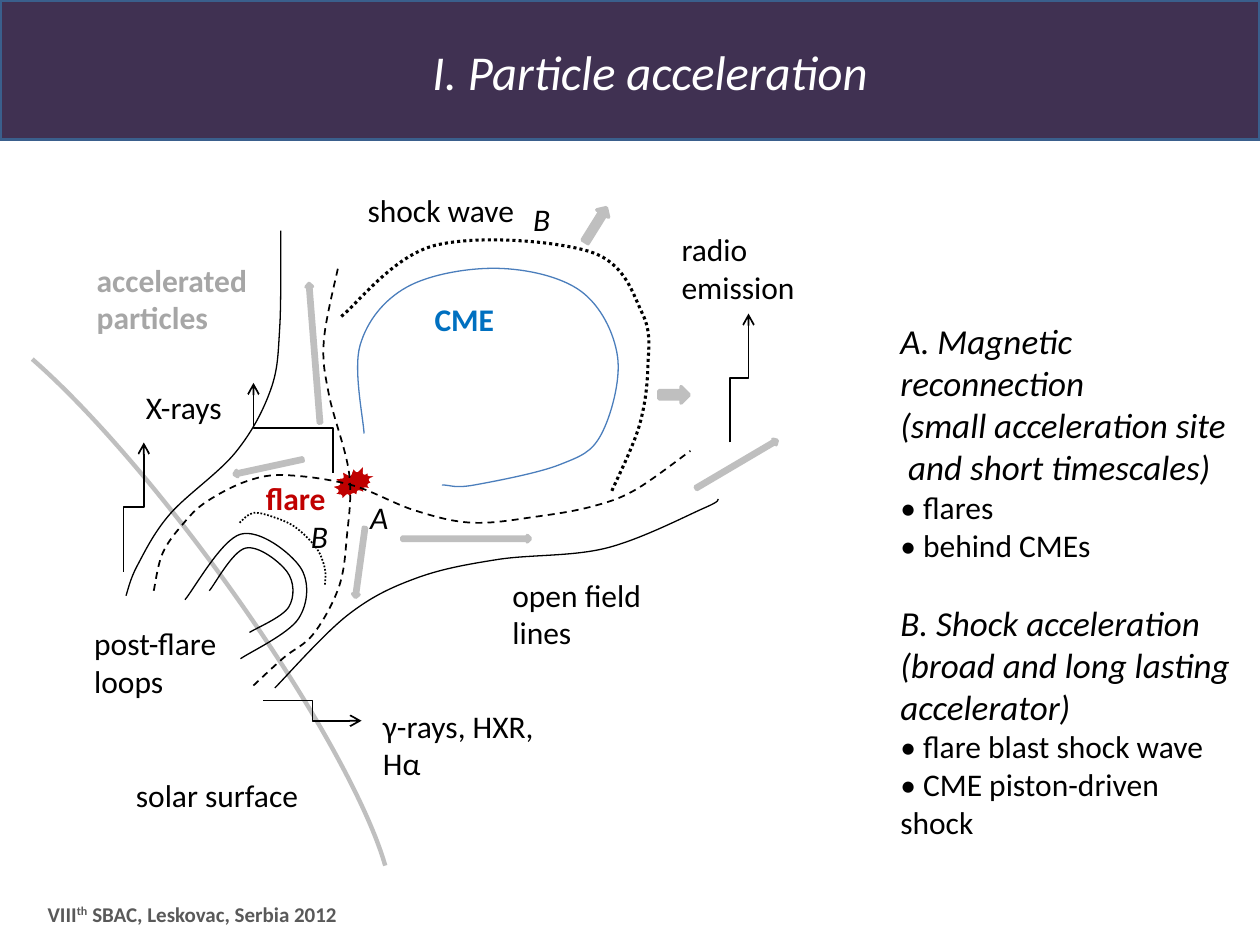
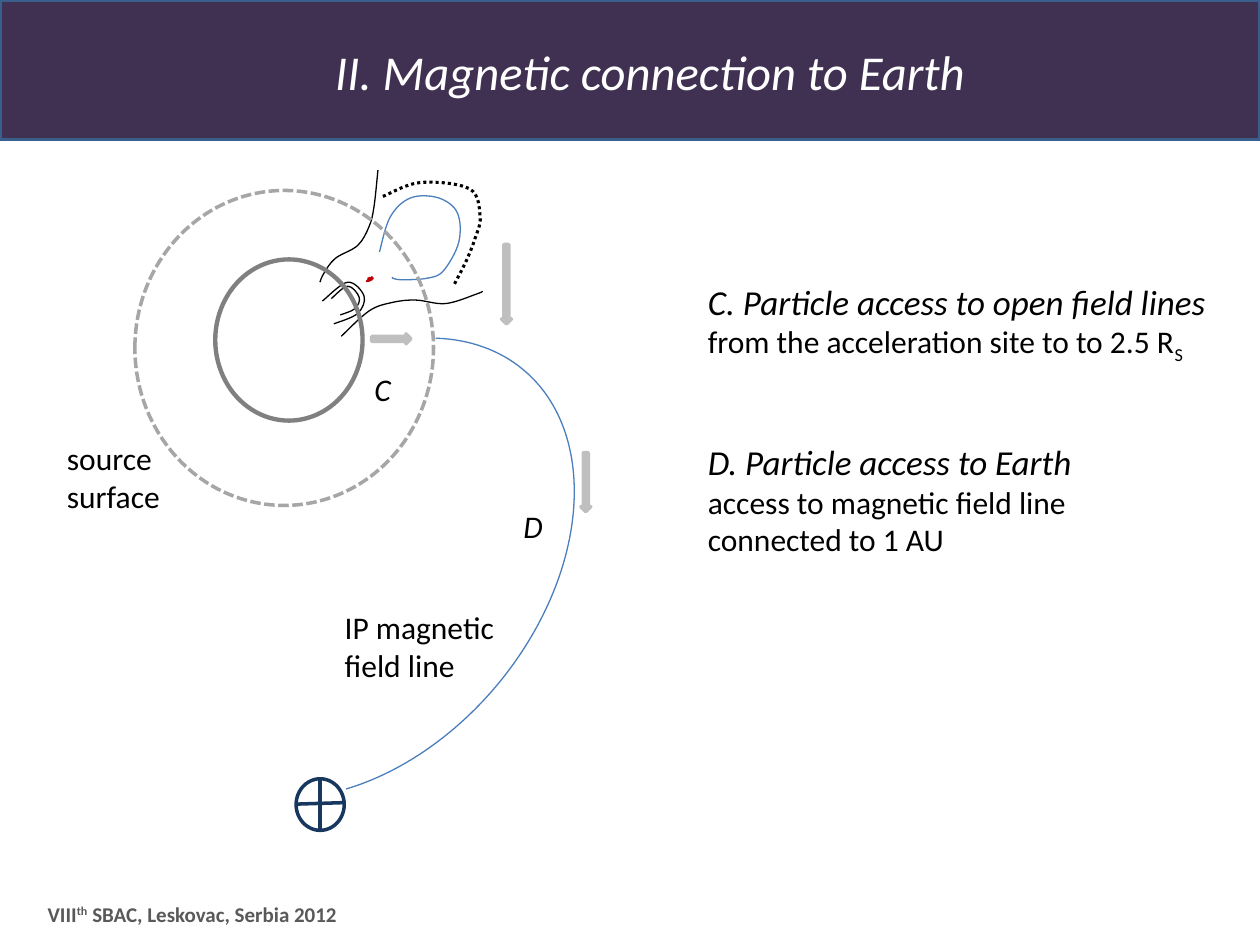
"""Build two slides on solar particle acceleration and its magnetic connection to Earth."""
from lxml.etree import SubElement
from pptx import Presentation
from pptx.dml.color import RGBColor
from pptx.enum.dml import MSO_LINE as Dash
from pptx.enum.shapes import MSO_CONNECTOR as Link, MSO_SHAPE as Preset
from pptx.enum.text import MSO_ANCHOR as Anchor, MSO_AUTO_SIZE as AutoSize, PP_ALIGN as Align
from pptx.oxml.ns import qn
from pptx.util import Cm, Pt

FONT = "Calibri"
WHITE = RGBColor(0xFF, 0xFF, 0xFF)
BLACK = RGBColor(0x00, 0x00, 0x00)
BAND = RGBColor(0x40, 0x31, 0x52)
BAND_EDGE = RGBColor(0x3A, 0x5F, 0x8C)
FOOTER_GRAY = RGBColor(0x59, 0x59, 0x59)
SUN_GRAY = RGBColor(0x80, 0x80, 0x80)
MID_GRAY = RGBColor(0xA6, 0xA6, 0xA6)
LIGHT_GRAY = RGBColor(0xBF, 0xBF, 0xBF)
FLARE_RED = RGBColor(0xC0, 0x00, 0x00)
CME_BLUE = RGBColor(0x00, 0x70, 0xC0)
FIELD_BLUE = RGBColor(0x4B, 0x7E, 0xBC)
EARTH_BLUE = RGBColor(0x17, 0x37, 0x5E)

FLARE_CURVES = [
    ([(6.88, 6.38), (8.76, 4.95), (11.91, 5.08), (12.95, 6.32), (13.06, 7.42),
      (12.88, 8.61), (12.32, 9.93)], BLACK, 1.75, Dash.ROUND_DOT),
    ([(4.22, 11.91), (4.95, 11.05), (5.79, 11.53), (5.82, 12.24), (5.03, 12.75)],
     BLACK, 0.75, None),
    ([(7.34, 8.74), (7.26, 6.96), (8.2, 5.79), (10.03, 5.41), (11.71, 5.87), (12.45, 7.19),
      (12.12, 8.76), (11.28, 9.37), (9.55, 9.78), (8.97, 9.78), (8.94, 9.78)],
     FIELD_BLUE, 0.75, None),
    ([(3.73, 12.09), (4.85, 10.77), (6.05, 11.43), (6.02, 12.47), (4.85, 13.28)],
     BLACK, 0.75, None),
    ([(5.54, 13.87), (7.01, 12.4), (8.38, 11.66), (10.03, 11.28), (12.22, 11.05),
      (14.2, 10.24), (14.48, 10.06)], BLACK, 0.75, None),
    ([(5.66, 4.65), (5.64, 6.6), (5.46, 7.85), (4.75, 9.12), (3.43, 10.36), (2.77, 11.4),
      (2.54, 12.01)], BLACK, 0.75, None),
    ([(3.1, 11.91), (3.28, 11.15), (3.71, 10.54), (4.17, 10.11), (4.98, 9.7), (5.77, 9.58),
      (7.09, 9.78), (8.36, 10.29), (9.53, 10.54), (10.85, 10.41), (11.94, 10.21),
      (12.8, 9.88), (13.92, 9.09)], BLACK, 1, Dash.DASH),
    ([(5.11, 13.82), (5.72, 13.26), (6.32, 12.78), (6.83, 11.84), (6.99, 10.85),
      (7.04, 9.55), (6.63, 7.95), (6.53, 6.86), (6.83, 5.33)], BLACK, 1, Dash.DASH),
    ([(4.83, 10.54), (5.11, 10.34), (5.56, 10.44), (5.97, 10.64), (6.38, 11.05),
      (6.55, 11.46), (6.55, 11.79)], BLACK, 1, Dash.ROUND_DOT),
]
SMALL_FLARE_CURVES = [
    ([(7.72, 3.96), (8.48, 3.68), (9.47, 3.81), (9.68, 4.37), (9.58, 4.8), (9.4, 5.26),
      (9.14, 5.77)], BLACK, 1.75, Dash.ROUND_DOT),
    ([(6.68, 6.02), (7.01, 5.77), (7.24, 5.99), (7.16, 6.22), (6.86, 6.35)],
     BLACK, 0.75, None),
    ([(7.65, 5.08), (7.87, 4.37), (8.28, 3.99), (8.84, 3.99), (9.22, 4.29), (9.25, 4.88),
      (8.94, 5.46), (8.61, 5.61), (8.1, 5.64), (7.92, 5.61), (7.92, 5.59)],
     FIELD_BLUE, 0.75, None),
    ([(6.5, 6.07), (7.01, 5.69), (7.34, 5.97), (7.21, 6.32), (6.73, 6.53)],
     BLACK, 0.75, None),
    ([(6.88, 6.78), (7.44, 6.27), (7.9, 6.1), (8.38, 6.05), (8.99, 6.12), (9.63, 5.92),
      (9.73, 5.87)], BLACK, 0.75, None),
    ([(7.62, 3.43), (7.54, 4.17), (7.44, 4.57), (7.21, 4.95), (6.76, 5.21), (6.53, 5.51),
      (6.45, 5.69)], BLACK, 0.75, None),
]
FLARE_FLOWS = [
    (5.41, 9.41, 1.42, 0.13, 167.8), (6.34, 7.12, 2.82, 0.13, 265.5),
    (7.26, 11.34, 1.42, 0.13, 97.8), (9.4, 10.86, 2.59, 0.13, 0),
    (12.01, 4.53, 0.81, 0.28, 301.9), (13.59, 7.96, 0.61, 0.33, 0),
    (14.85, 9.36, 1.9, 0.13, 329.5),
]
EARTH_FLOWS = [(7.89, 6.83, 0.79, 0.2, 0), (10.21, 5.73, 1.6, 0.2, 90),
               (11.81, 9.72, 1.19, 0.2, 90)]
RADIATION_UP = [((2.49, 11.53), (2.9, 8.92)), ((14.71, 8.92), (15.09, 6.32)),
                ((6.71, 9.53), (5.11, 7.72))]
FLARE_LABELS = [
    ("solar surface", 2.49, 15.52, 5.89, 1), ("shock wave", 7.16, 3.73, 3.53, 1),
    ("post-flare\nloops", 1.65, 12.45, 3.51, 2), ("open field lines", 10.08, 11.48, 3.84, 2),
    ("γ-rays, HXR, Hα", 7.47, 14.12, 4.24, 2), ("X-rays", 2.69, 7.7, 2.59, 1),
    ("radio emission", 13.49, 4.52, 2.79, 2),
]
BOLD_LABELS = [
    ("flare", 5.11, 9.53, 2.13, 1, FLARE_RED), ("CME", 8.51, 5.92, 2.49, 1, CME_BLUE),
    ("accelerated particles", 1.7, 5.13, 3.89, 2, MID_GRAY),
]
ACCELERATION = [
    (["A. Magnetic reconnection", "(small acceleration site", " and short timescales)"],
     ["• flares", "• behind CMEs"]),
    (["B. Shock acceleration", "(broad and long lasting", "accelerator)"],
     ["• flare blast shock wave", "• CME piston-driven shock"]),
]
CONNECTION = [
    (["C. Particle access to open field lines"], ["from the acceleration site to to 2.5 R"]),
    (["D. Particle access to Earth"], ["access to magnetic field line", "connected to 1 AU"]),
]


def set_font(paragraph, size, color=BLACK, bold=False, italic=False):
    """Format a whole paragraph."""
    font = paragraph.font
    font.name, font.size, font.bold, font.italic = FONT, Pt(size), bold, italic
    font.color.rgb = color


def add_shifted_run(paragraph, text, percent):
    """Append a superscript or subscript run."""
    span = paragraph.add_run()
    span.text = text
    span._r.get_or_add_rPr().set("baseline", str(percent * 1000))


def paint(shape, color, width, dash=None, fill=None):
    """Set outline and fill, and drop the shadow."""
    shape.shadow.inherit = False
    shape.line.color.rgb = color
    shape.line.width = Pt(width)
    if dash:
        shape.line.dash_style = dash
    if fill is None:
        shape.fill.background()
    else:
        shape.fill.solid()
        shape.fill.fore_color.rgb = fill


def add_preset(page, preset, left, top, width, height, color, weight, dash=None, fill=None,
               rotation=0):
    """Draw a preset shape."""
    shape = page.shapes.add_shape(preset, Cm(left), Cm(top), Cm(width), Cm(height))
    shape.rotation = rotation
    paint(shape, color, weight, dash, fill)
    return shape


def add_arc(page, left, top, width, height, color, weight, rotation, start, end):
    """Draw an open elliptical arc."""
    arc = add_preset(page, Preset.ARC, left, top, width, height, color, weight,
                     rotation=rotation)
    arc.adjustments[0], arc.adjustments[1] = start, end


def bend(shape):
    """Turn the straight segments of a freeform into Bezier curves through its knots."""
    knots = [(int(point.get("x")), int(point.get("y")))
             for point in shape.element.iter(qn("a:pt"))]
    padded = [knots[0], *knots, knots[-1]]
    segments = list(shape.element.iter(qn("a:lnTo")))
    for segment, *near in zip(segments, padded, padded[1:], padded[2:], padded[3:]):
        controls = [(b + (c - a) / 6, c - (d - b) / 6) for a, b, c, d in zip(*near)]
        for place, (x, y) in enumerate(zip(*controls)):
            point = segment.makeelement(qn("a:pt"), x=str(round(x)), y=str(round(y)))
            segment.insert(place, point)
        segment.tag = qn("a:cubicBezTo")


def add_curve(page, points, color, weight, dash):
    """Draw a smooth open curve."""
    first, *rest = [(Cm(x), Cm(y)) for x, y in points]
    builder = page.shapes.build_freeform(*first)
    builder.add_line_segments(rest, close=False)
    curve = builder.convert_to_shape()
    bend(curve)
    paint(curve, color, weight, dash)


def add_flow(page, center_x, center_y, length, thickness, rotation):
    """Draw a gray block arrow about its centre."""
    add_preset(page, Preset.RIGHT_ARROW, center_x - length / 2, center_y - thickness / 2,
               length, thickness, LIGHT_GRAY, 2, fill=LIGHT_GRAY, rotation=rotation)


def add_link(page, kind, start, end, color, weight, arrow=False):
    """Draw a connector, with an open arrowhead if asked."""
    link = page.shapes.add_connector(kind, *(Cm(value) for value in (*start, *end)))
    link.line.color.rgb = color
    link.line.width = Pt(weight)
    properties = link.element.spPr
    if arrow:
        SubElement(properties.find(qn("a:ln")), qn("a:tailEnd"), type="arrow")
    SubElement(properties, qn("a:effectLst"))
    return link


def add_upward_link(page, start, end):
    """Draw an elbow arrow that leaves and arrives vertically."""
    (x0, y0), (x1, y1) = start, end
    center_x, center_y = (x0 + x1) / 2, (y0 + y1) / 2
    half_rise, half_shift = (y0 - y1) / 2, (x1 - x0) / 2
    link = add_link(page, Link.ELBOW, (center_x - half_rise, center_y - half_shift),
                    (center_x + half_rise, center_y + half_shift), BLACK, 1, arrow=True)
    link.rotation = 270


def add_box(page, left, top, width, height):
    """Add a wrapping text box and return its text frame."""
    frame = page.shapes.add_textbox(Cm(left), Cm(top), Cm(width), Cm(height)).text_frame
    frame.word_wrap = True
    return frame


def add_label(page, text, left, top, width, rows, color=BLACK, bold=False, italic=False):
    """Add a diagram label of one or more rows."""
    frame = add_box(page, left, top, width, 0.25 + 0.77 * rows)
    frame.text = text
    for paragraph in frame.paragraphs:
        set_font(paragraph, 18, color, bold, italic)


def add_letter(page, letter, left, top):
    """Add an italic key letter."""
    add_label(page, letter, left, top, 0.9, 1, italic=True)


def add_panel(page, left, top, width, height, sections, gap):
    """Add italic headings with details, sections set apart by a gap in points."""
    frame = add_box(page, left, top, width, height)
    frame.text = "\n".join(line for section in sections for part in section for line in part)
    paragraphs = iter(frame.paragraphs)
    for number, (headings, details) in enumerate(sections):
        for row in range(len(headings)):
            paragraph = next(paragraphs)
            set_font(paragraph, 20, italic=True)
            if number and row == 0:
                paragraph.space_before = Pt(gap)
        for _ in details:
            set_font(next(paragraphs), 18)
    return frame


def add_page(deck, heading):
    """Add a slide with the title band and the footer."""
    page = deck.slides.add_slide(deck.slide_layouts[5])
    add_preset(page, Preset.RECTANGLE, 0, 0, 25.4, 2.81, BAND_EDGE, 2, fill=BAND)
    title = page.shapes.title
    title.left, title.top, title.width, title.height = Cm(3.51), Cm(0.73), Cm(19.2), Cm(1.4)
    frame = title.text_frame
    frame.text = heading
    frame.auto_size = AutoSize.NONE
    frame.vertical_anchor = Anchor.MIDDLE
    frame.paragraphs[0].alignment = Align.CENTER
    set_font(frame.paragraphs[0], 27.8, WHITE, italic=True)
    title.element.getparent().append(title.element)

    footer = add_box(page, 0.71, 17.91, 6.4, 1.02)
    footer.vertical_anchor = Anchor.MIDDLE
    paragraph = footer.paragraphs[0]
    paragraph.add_run().text = "VIII"
    add_shifted_run(paragraph, "th", 30)
    paragraph.add_run().text = " SBAC, Leskovac, Serbia 2012"
    set_font(paragraph, 12, FOOTER_GRAY, bold=True)
    return page


def build_acceleration(deck):
    """Build the flare and shock slide."""
    page = add_page(deck, "I. Particle acceleration")
    add_arc(page, -4.14, 11.05, 14.96, 2.79, LIGHT_GRAY, 2.5, 54, 113.2, 212.71)
    add_preset(page, Preset.EXPLOSION2, 6.63, 9.32, 1.07, 0.81, WHITE, 2, fill=FLARE_RED)
    for curve in FLARE_CURVES:
        add_curve(page, *curve)
    for flow in FLARE_FLOWS:
        add_flow(page, *flow)
    for start, end in RADIATION_UP:
        add_upward_link(page, start, end)
    add_link(page, Link.ELBOW, (5.31, 14.12), (7.29, 14.53), BLACK, 1, arrow=True)
    for label in FLARE_LABELS:
        add_label(page, *label)
    for label in BOLD_LABELS:
        add_label(page, *label, bold=True)
    for letter in (("A", 7.21, 9.91), ("B", 10.5, 3.9), ("B", 6.02, 10.29)):
        add_letter(page, *letter)
    add_panel(page, 17.9, 6.32, 7.16, 10.85, ACCELERATION, 21.6)


def build_connection(deck):
    """Build the Sun to Earth slide."""
    page = add_page(deck, "II. Magnetic connection to Earth")
    add_preset(page, Preset.EXPLOSION2, 7.32, 5.46, 0.3, 0.33, WHITE, 2, fill=FLARE_RED,
               rotation=14.4)
    for curve in SMALL_FLARE_CURVES:
        add_curve(page, *curve)
    add_preset(page, Preset.OVAL, 4.34, 5.23, 2.97, 3.25, SUN_GRAY, 2.5)
    add_arc(page, 3.56, 6.25, 7.32, 10.41, FIELD_BLUE, 0.75, 39.7, 149.36, 32.06)
    add_preset(page, Preset.OVAL, 2.72, 3.84, 6.02, 6.35, MID_GRAY, 2, Dash.SQUARE_DOT)
    add_preset(page, Preset.OVAL, 5.97, 15.7, 0.97, 1.04, EARTH_BLUE, 2)
    add_link(page, Link.STRAIGHT, (6.45, 15.7), (6.45, 16.71), EARTH_BLUE, 2)
    add_link(page, Link.STRAIGHT, (5.97, 16.21), (6.93, 16.18), EARTH_BLUE, 2)
    for flow in EARTH_FLOWS:
        add_flow(page, *flow)
    add_label(page, "source\nsurface", 1.1, 8.72, 2.59, 2)
    add_label(page, "IP magnetic\nfield line", 6.7, 12.13, 3.61, 2)
    add_letter(page, "D", 10.3, 10.09)
    add_letter(page, "C", 7.3, 7.33)
    panel = add_panel(page, 14.02, 5.52, 10.95, 7.34, CONNECTION, 43.2)
    add_shifted_run(panel.paragraphs[1], "S", -25)


def main():
    """Build and save the deck."""
    deck = Presentation()
    deck.slide_width, deck.slide_height = Cm(25.4), Cm(19.05)
    build_acceleration(deck)
    build_connection(deck)
    deck.save("out.pptx")


if __name__ == "__main__":
    main()
